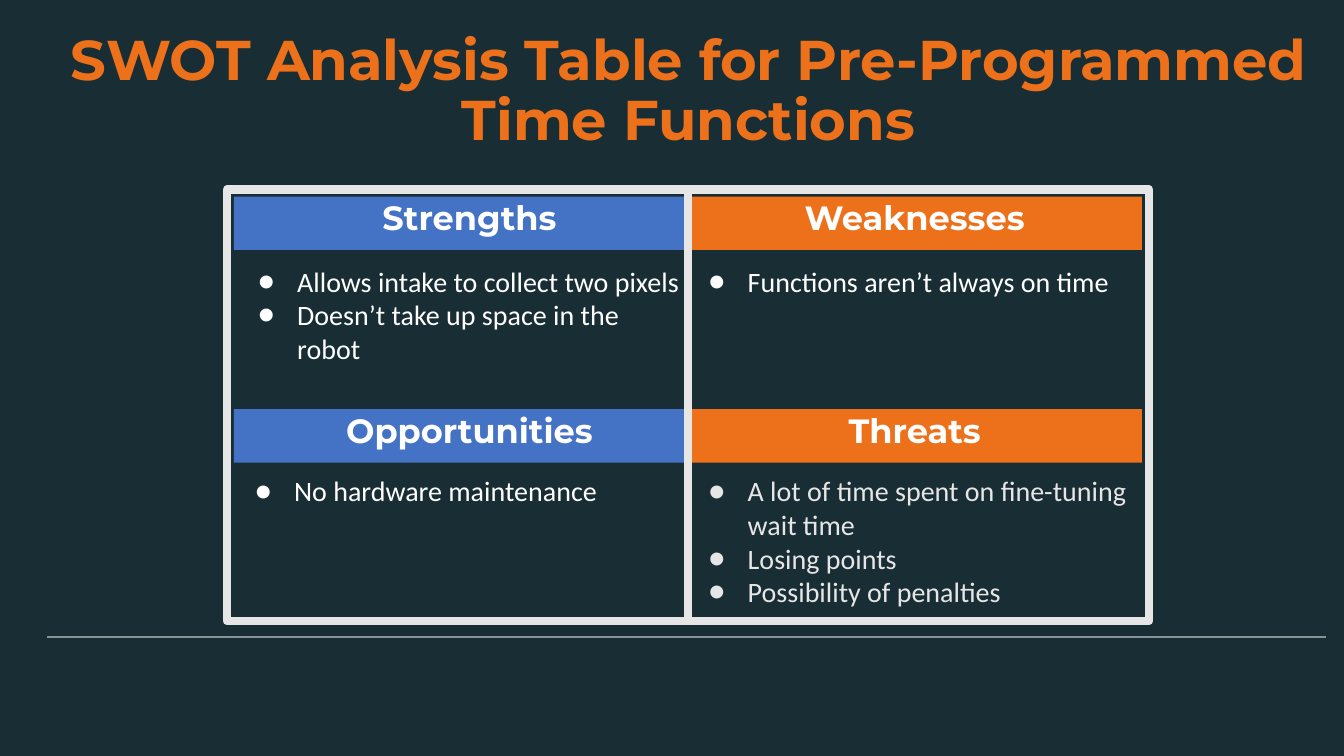
from lxml.etree import SubElement
from pptx import Presentation
from pptx.dml.color import RGBColor
from pptx.enum.shapes import MSO_CONNECTOR as Connector, MSO_SHAPE as Shape
from pptx.enum.text import MSO_ANCHOR as Anchor, MSO_AUTO_SIZE as AutoSize, PP_ALIGN as Align
from pptx.oxml.ns import qn
from pptx.util import Pt

DARK = RGBColor(0x19, 0x2E, 0x34)
ORANGE = RGBColor(0xED, 0x70, 0x1A)
BLUE = RGBColor(0x44, 0x72, 0xC4)
WHITE = RGBColor(0xFF, 0xFF, 0xFF)
LIGHT = RGBColor(0xE7, 0xE6, 0xE6)
GRAY = RGBColor(0x86, 0x92, 0x95)

HEADING_FONT = "Montserrat"
BODY_FONT = "Calibri"

LEFT, RIGHT = 167, 491
COLUMN_WIDTH = 324.7
HEADER_HEIGHT = 38.2
UPPER, LOWER = 140.4, 292.3

# heading, fill, left, top, heading indent, list left, list top, list height, list colour, items
QUADRANTS = [
    ("Strengths", BLUE, LEFT, UPPER, (18, -6), 169.2, 181.4, 87, WHITE,
     ["Allows intake to collect two pixels", "Doesn’t take up space in the robot"]),
    ("Weaknesses", ORANGE, RIGHT, UPPER, (0, 0), RIGHT, 181.4, 39, WHITE,
     ["Functions aren’t always on time"]),
    ("Opportunities", BLUE, LEFT, LOWER, (18, -6), LEFT, 331.2, 39, WHITE,
     ["No hardware maintenance"]),
    ("Threats", ORANGE, RIGHT, LOWER, (0, 0), RIGHT, 331.2, 111.6, LIGHT,
     ["A lot of time spent on fine-tuning wait time", "Losing points",
      "Possibility of penalties"]),
]


def add_rectangle(page, left, top, width, height, fill):
    box = page.shapes.add_shape(Shape.RECTANGLE, Pt(left), Pt(top), Pt(width), Pt(height))
    box.shadow.inherit = False
    box.fill.solid()
    box.fill.fore_color.rgb = fill
    box.line.fill.background()
    return box


def add_text_box(page, left, top, width, height):
    return page.shapes.add_textbox(Pt(left), Pt(top), Pt(width), Pt(height))


def add_line(page, start, end, color, weight):
    line = page.shapes.add_connector(Connector.STRAIGHT, *map(Pt, start + end))
    line.line.color.rgb = color
    line.line.width = Pt(weight)
    SubElement(line._element.spPr, qn("a:effectLst"))
    return line


def prepare_frame(box, anchor, vertical_inset):
    frame = box.text_frame
    frame.word_wrap = True
    frame.vertical_anchor = anchor
    frame.margin_left = frame.margin_right = Pt(7.2)
    frame.margin_top = frame.margin_bottom = Pt(vertical_inset)
    return frame


def indent(para, margin, first_line):
    properties = para._p.get_or_add_pPr()
    properties.set("marL", str(Pt(margin)))
    properties.set("indent", str(Pt(first_line)))
    return properties


def add_run(para, text, font, size, color, bold=False):
    span = para.add_run()
    span.text = text
    span.font.name = font
    span.font.size = Pt(size)
    span.font.color.rgb = color
    span.font.bold = bold


def write_heading(box, text, size, color, anchor, margins=(0, 0)):
    para = prepare_frame(box, anchor, 3.6).paragraphs[0]
    indent(para, *margins)
    para.alignment = Align.CENTER
    para.line_spacing = 0.9
    add_run(para, text, HEADING_FONT, size, color, bold=True)


def add_bullet(para, color):
    properties = indent(para, 36, -28)
    bullet_color = SubElement(properties, qn("a:buClr"))
    SubElement(bullet_color, qn("a:srgbClr"), val=str(color))
    SubElement(properties, qn("a:buFont"), typeface=BODY_FONT)
    SubElement(properties, qn("a:buChar"), char="●")


def add_bullet_list(page, left, top, height, items, color):
    box = add_text_box(page, left, top, COLUMN_WIDTH, height)
    frame = prepare_frame(box, Anchor.TOP, 7.2)
    frame.auto_size = AutoSize.SHAPE_TO_FIT_TEXT
    for index, item in enumerate(items):
        para = frame.add_paragraph() if index else frame.paragraphs[0]
        add_bullet(para, color)
        add_run(para, item, BODY_FONT, 20, color)


def main():
    deck = Presentation()
    deck.slide_width, deck.slide_height = Pt(960), Pt(540)
    page = deck.slides.add_slide(deck.slide_layouts[6])
    page.background.fill.solid()
    page.background.fill.fore_color.rgb = DARK

    add_line(page, (33.8, 455), (947.5, 455), GRAY, 0.75)
    swot_frame = add_rectangle(page, 162, 135.4, 658.8, 308.2, DARK)
    swot_frame.line.color.rgb = LIGHT
    swot_frame.line.width = Pt(6)

    title = add_text_box(page, 14.4, 25.2, 954.7, 81.4)
    write_heading(title, "SWOT Analysis Table for Pre-Programmed Time Functions",
                  40, ORANGE, Anchor.MIDDLE)

    for (heading, fill, left, top, margins,
         list_left, list_top, list_height, color, items) in QUADRANTS:
        header = add_rectangle(page, left, top, COLUMN_WIDTH, HEADER_HEIGHT, fill)
        write_heading(header, heading, 24, WHITE, Anchor.TOP, margins)
        add_bullet_list(page, list_left, list_top, list_height, items, color)

    divider = add_line(page, (491.4, 135.4), (491.4, 443.6), LIGHT, 6)
    divider.begin_connect(swot_frame, 0)
    divider.end_connect(swot_frame, 2)

    deck.save("out.pptx")


if __name__ == "__main__":
    main()
